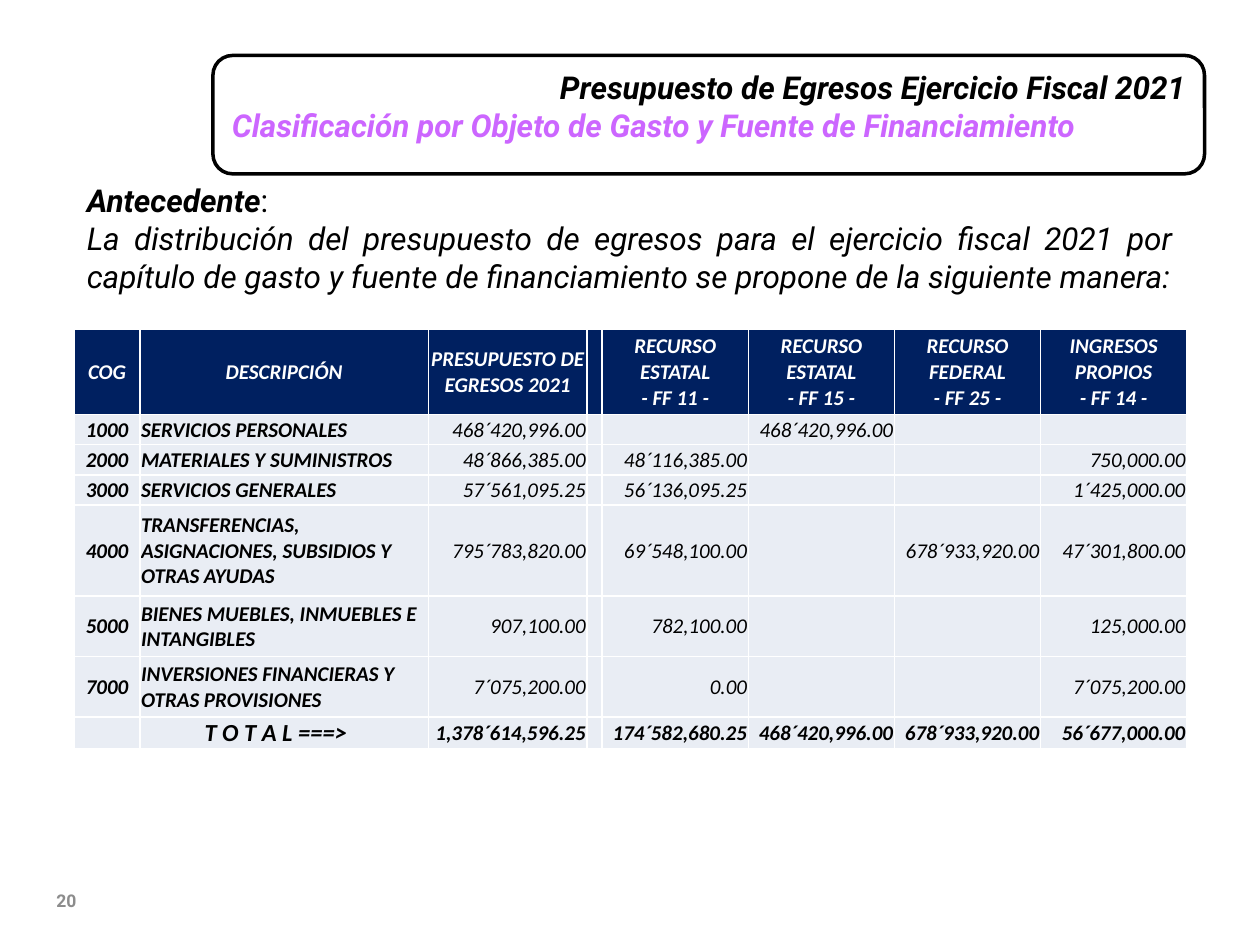
from lxml.etree import SubElement
from pptx import Presentation
from pptx.dml.color import RGBColor as RGB
from pptx.enum.shapes import MSO_SHAPE as SHAPE
from pptx.enum.text import MSO_ANCHOR as ANCHOR, MSO_AUTO_SIZE as FIT, PP_ALIGN as ALIGN
from pptx.oxml.ns import qn
from pptx.util import Inches, Pt

BLACK = RGB(0x00, 0x00, 0x00)
WHITE = RGB(0xFF, 0xFF, 0xFF)
PURPLE = RGB(0xCC, 0x66, 0xFF)
GRAY = RGB(0x8C, 0x8C, 0x8C)
NAVY = RGB(0x00, 0x20, 0x60)
PALE = RGB(0xE9, 0xED, 0xF4)

COLS = [0.52, 2.29, 1.26, 0.12] + [1.16] * 4
ROWS = [0.68, 0.24, 0.24, 0.24, 0.72, 0.48, 0.48, 0.25]
HEAD = ["COG", "DESCRIPCIÓN", "PRESUPUESTO DE EGRESOS 2021", "",
        "RECURSO ESTATAL\v- FF 11 -", "RECURSO ESTATAL\v- FF 15 -",
        "RECURSO FEDERAL\v- FF 25 -", "INGRESOS PROPIOS\v- FF 14 -"]
DATA = [
    ["1000", "SERVICIOS PERSONALES", "468´420,996.00", "", "", "468´420,996.00", "", ""],
    ["2000", "MATERIALES Y SUMINISTROS", "48´866,385.00", "", "48´116,385.00", "", "",
     "750,000.00"],
    ["3000", "SERVICIOS GENERALES", "57´561,095.25", "", "56´136,095.25", "", "",
     "1´425,000.00"],
    ["4000", "TRANSFERENCIAS, ASIGNACIONES, SUBSIDIOS Y OTRAS AYUDAS", "795´783,820.00", "",
     "69´548,100.00", "", "678´933,920.00", "47´301,800.00"],
    ["5000", "BIENES MUEBLES, INMUEBLES E INTANGIBLES", "907,100.00", "", "782,100.00", "", "",
     "125,000.00"],
    ["7000", "INVERSIONES FINANCIERAS Y OTRAS PROVISIONES", "7´075,200.00", "", "0.00", "", "",
     "7´075,200.00"],
]
TOTAL = ["", "T O T A L ===>", "1,378´614,596.25", "", "174´582,680.25", "468´420,996.00",
         "678´933,920.00", "56´677,000.00"]


def style(font, color, **form):
    for key, value in form.items():
        setattr(font, key, value)
    font.color.rgb = color


def place(shape, box):
    for key, value in zip(("left", "top", "width", "height"), box):
        setattr(shape, key, Inches(value))


def write(para, text, align, color, **form):
    para.alignment = align
    run = para.add_run()
    run.text = text
    style(run.font, color, **form)


def add_title(slide, box):
    left, top, width, height = box
    # Rounded outline
    frame = slide.shapes.add_shape(SHAPE.ROUNDED_RECTANGLE, *map(Inches, box))
    frame.shadow.inherit = False
    frame.fill.background()
    frame.line.color.rgb = BLACK
    frame.line.width = Pt(2)
    # Two-line title inside it
    title = slide.shapes.title
    place(title, (left + 0.05, top + 0.05, width - 0.1, height - 0.1))
    text = title.text_frame
    text.auto_size, text.vertical_anchor = FIT.NONE, ANCHOR.TOP
    form = dict(name="Roboto", size=Pt(18), bold=True, italic=True)
    write(text.paragraphs[0], "Presupuesto de Egresos Ejercicio Fiscal 2021",
          ALIGN.RIGHT, BLACK, **form)
    write(text.add_paragraph(), "Clasificación por Objeto de Gasto y Fuente de Financiamiento",
          ALIGN.LEFT, PURPLE, **form)


def add_intro(slide, box):
    text = slide.shapes.add_textbox(*map(Inches, box)).text_frame
    text.word_wrap = True
    form = dict(name="Roboto", size=Pt(18))
    lead = text.paragraphs[0]
    write(lead, "Antecedente", ALIGN.JUSTIFY, BLACK, bold=True, italic=True, **form)
    write(lead, ":", ALIGN.JUSTIFY, BLACK, **form)
    write(text.add_paragraph(),
          "La distribución del presupuesto de egresos para el ejercicio fiscal 2021 por "
          "capítulo de gasto y fuente de financiamiento se propone de la siguiente manera:",
          ALIGN.JUSTIFY, BLACK, italic=True, **form)


def add_edges(cell):
    props = cell._tc.get_or_add_tcPr()
    for side in "LRTB":
        line = SubElement(props, qn(f"a:ln{side}"), w=str(Pt(1)))
        fill = SubElement(line, qn("a:solidFill"))
        SubElement(fill, qn("a:srgbClr"), val=str(WHITE))


def fill_cell(cell, text, align, fill, color, size, bold):
    for side in ("left", "right", "top"):
        setattr(cell, f"margin_{side}", Inches(0.01))
    cell.margin_bottom = 0
    cell.vertical_anchor = ANCHOR.MIDDLE
    add_edges(cell)
    cell.fill.solid()
    cell.fill.fore_color.rgb = fill
    cell.text = text
    para = cell.text_frame.paragraphs[0]
    para.alignment = align
    for run in para.runs:
        style(run.font, color, name="Calibri", size=Pt(size), bold=bold, italic=True)
    # Line breaks and empty cells keep the text size too
    for mark in para._p.findall(qn("a:br")):
        SubElement(mark, qn("a:rPr"), sz=str(size * 100))
    if not text:
        SubElement(para._p, qn("a:endParaRPr"), sz=str(size * 100))


def add_budget(slide, box):
    rows = [HEAD, *DATA, TOTAL]
    frame = slide.shapes.add_table(len(rows), len(COLS), *map(Inches, box))
    table = frame.table
    for col, width in zip(table.columns, COLS):
        col.width = Inches(width)
    for row, height in zip(table.rows, ROWS):
        row.height = Inches(height)
    sides = [ALIGN.CENTER, ALIGN.LEFT] + [ALIGN.RIGHT] * 6
    for r, row in enumerate(rows):
        head, total = row is HEAD, row is TOTAL
        for c, text in enumerate(row):
            label = total and c == 1
            fill_cell(table.cell(r, c), text,
                      ALIGN.CENTER if head or label else sides[c],
                      NAVY if head else PALE, WHITE if head else BLACK,
                      14 if label else 12, head or total or c < 2)
    # The total label sits a little left of centre
    table.cell(len(rows) - 1, 1).margin_right = Inches(0.14)


def add_number(slide, box):
    text = slide.shapes.add_textbox(*map(Inches, box)).text_frame
    text.word_wrap = True
    text.vertical_anchor = ANCHOR.MIDDLE
    write(text.paragraphs[0], "20", ALIGN.LEFT, GRAY, name="Roboto", size=Pt(10), bold=True)


def main():
    deck = Presentation()
    deck.slide_width, deck.slide_height = Inches(10), Inches(7.5)
    slide = deck.slides.add_slide(deck.slide_layouts[5])
    add_number(slide, (0.35, 6.95, 2.33, 0.4))
    add_intro(slide, (0.59, 1.39, 8.82, 1.22))
    add_title(slide, (1.69, 0.44, 7.87, 0.94))
    add_budget(slide, (0.59, 2.61, 8.82, 3.35))
    deck.save("out.pptx")


if __name__ == "__main__":
    main()
